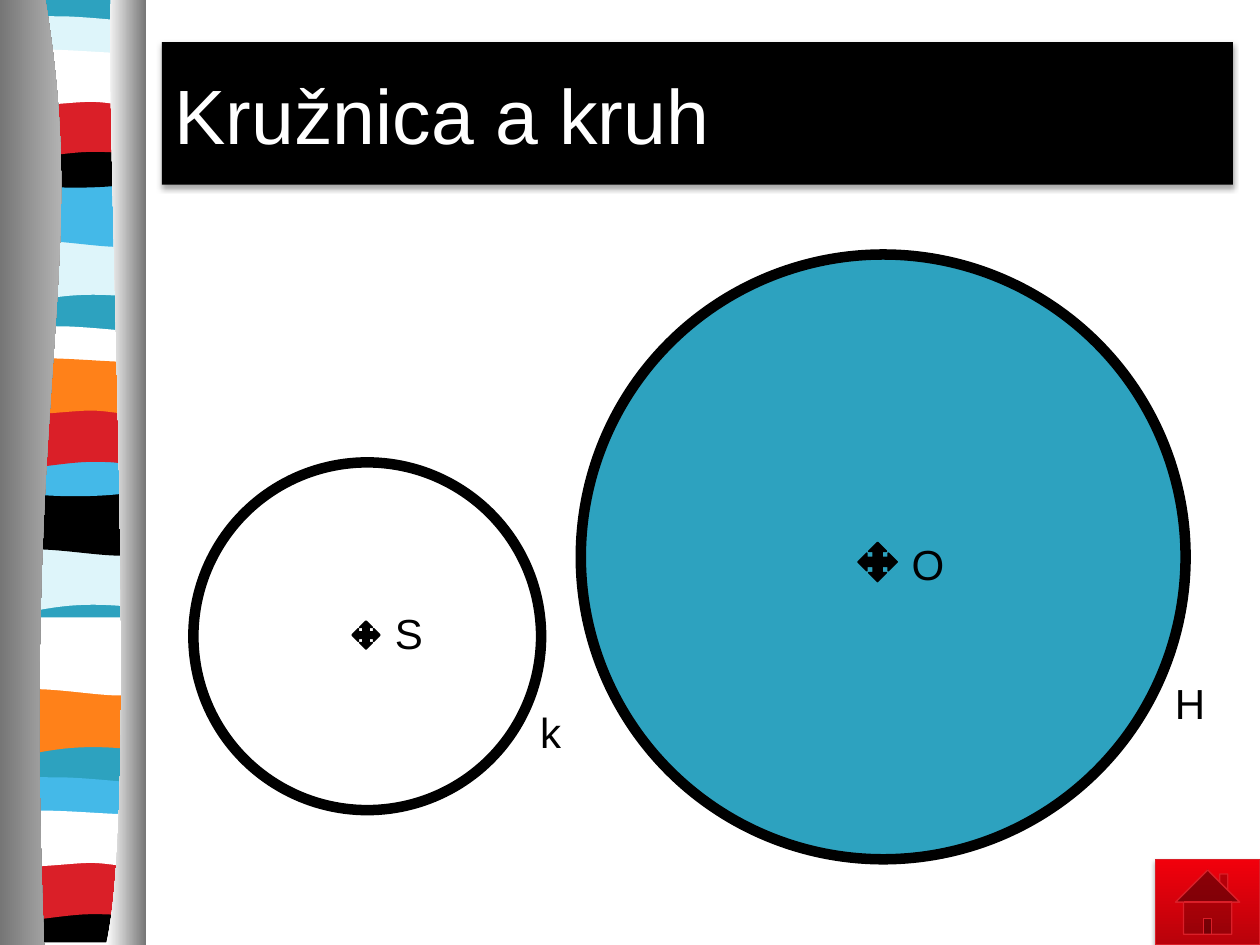
from dataclasses import dataclass

from lxml import etree
from pptx import Presentation
from pptx.dml.color import RGBColor
from pptx.enum.shapes import MSO_SHAPE
from pptx.enum.text import MSO_ANCHOR, PP_ALIGN
from pptx.oxml.ns import qn
from pptx.util import Inches, Pt

ELLIPSE = MSO_SHAPE.OVAL
CENTRE_MARK = MSO_SHAPE.QUAD_ARROW
HOME_BUTTON = MSO_SHAPE.ACTION_BUTTON_HOME
LEFT, CENTER = PP_ALIGN.LEFT, PP_ALIGN.CENTER
MIDDLE, TOP = MSO_ANCHOR.MIDDLE, MSO_ANCHOR.TOP
COLUMNS, ROWS, CELL = 100, 75, 0.1
TITLE_ONLY = 5


@dataclass(frozen=True)
class Theme:
    """Colours, font and type sizes of the slide."""
    teal: str = "2DA2BF"
    pale: str = "DEF5FA"
    white: str = "FFFFFF"
    red: str = "DA1F28"
    black: str = "000000"
    blue: str = "44B9E8"
    orange: str = "FF8119"
    grey: str = "767676"
    silver: str = "D0D0D0"
    button_dark: str = "B8020B"
    button_bright: str = "F2000C"
    font: str = "Arial"
    title_size: int = 44
    label_size: int = 24
    outline: float = 6
    hairline: float = 1


THEME = Theme()

NEAR, FAR, STRETCH = 0.5, 11.4, 1.25
WAVES = {
    "sag": [[(FAR, 0)], [(FAR, 4.7)], [(3.9, 3.9), (2.4, 5.5), (NEAR, 4.7)], [(NEAR, 0)]],
    "swell": [[(FAR, 0)], [(FAR, 4.7)], [(9.6, 5.5), (3.9, 4.1), (NEAR, 4.7)], [(NEAR, 0)]],
    "lens": [[(FAR, 0.5)], [(FAR, 2.9)], [(9.6, 3.4), (2.4, 3.4), (NEAR, 2.9)], [(NEAR, 0.5)],
             [(1.2, 0), (2.9, 0.1), (4.7, 0.1)], [(6.5, 0.1), (10, 0.4), (FAR, 0.5)]],
    "bowl": [[(FAR, 0)], [(FAR, 3.2)], [(9.6, 3.8), (2.4, 3.8), (NEAR, 3.2)], [(NEAR, 0)],
             [(7.2, 0.5), (9.1, 0), (FAR, 0)]],
    "arch": [[(FAR, 0)], [(FAR, 4.7)], [(9.7, 4.2), (9, 4.2), (7.2, 4.2)],
             [(5.4, 4.2), (2.2, 4.7), (NEAR, 4.7)], [(NEAR, 0)]],
    "ribbon": [[(FAR, 0.5)], [(FAR, 3.6)], [(10.7, 4.1), (9, 3.6), (7.2, 3.6)],
               [(5.4, 3.6), (1.7, 4.1), (NEAR, 3.6)], [(NEAR, 0.5)],
               [(2.1, 0), (7.9, 0.5), (9.7, 0.5)], [(11.5, 0.5), (11, 0.5), (FAR, 0.5)]],
    "base": [[(FAR, 0)], [(FAR, 3.2)], [(NEAR, 3.2)], [(NEAR, 0)],
             [(7.2, 0.5), (9.1, 0), (FAR, 0)]],
}
BACKDROP = [[(FAR, 0)], [(FAR, 74.8)], [(NEAR, 74.8)], [(NEAR, 0)]]
BANDS = [
    ("sag", "pale", 18.5), ("swell", "blue", 14.1), ("lens", "pale", 1.6),
    ("bowl", "black", 10.8), ("arch", "red", 7.4), ("ribbon", "white", 4.1),
    ("sag", "pale", 43.1), ("swell", "black", 38.6), ("lens", "white", 26.2),
    ("bowl", "blue", 35.3), ("arch", "red", 32), ("ribbon", "orange", 28.6),
    ("sag", "orange", 54.4), ("swell", "white", 49.7), ("lens", "blue", 62),
    ("base", "black", 71.2), ("arch", "red", 67.9), ("ribbon", "white", 64.5),
]
LEFT_CURTAIN = [[(3.6, 0)], [(7.2, 21.6), (1.7, 29.6), (3.5, 75)], [(0, 75)], [(0, 0)]]
RIGHT_CURTAIN = [[(8.8, 0)], [(8.4, 12.5), (11.1, 64.6), (8.4, 75)], [(11.6, 75)], [(11.6, 0)]]
CIRCLES = [
    ("H", (91.7, 53.25, 5.5, 5), (46.1, 20.2, 48, 48), "teal",
     "O", (70.5, 42.25, 6.3, 5), (68.1, 43.05, 3.1, 3.1)),
    ("k", (41.35, 55.6, 4.7, 5), (15.35, 36.7, 27.6, 27.6), None,
     "S", (30.3, 47.7, 4.3, 5), (27.95, 49.3, 2.2, 2.2)),
]


def grid(cells):
    """Convert a count of grid cells to a length."""
    return Inches(cells * CELL)


def colour(name):
    """Look up a theme colour."""
    return RGBColor.from_string(getattr(THEME, name))


def set_values(target, values):
    """Set every attribute named in a dict."""
    for name, value in values.items():
        setattr(target, name, value)


def place(shape, area):
    """Move and size a shape on the grid."""
    names = ("left", "top", "width", "height")
    set_values(shape, dict(zip(names, map(grid, area))))


def paint(shape, fill=None, line=None, width=1):
    """Give a shape a flat fill and line without a shadow."""
    shape.shadow.inherit = False
    if fill:
        shape.fill.solid()
        shape.fill.fore_color.rgb = colour(fill)
    else:
        shape.fill.background()
    if line:
        shape.line.color.rgb = colour(line)
        shape.line.width = Pt(width)
    else:
        shape.line.fill.background()


def blend(shape, start, end, angle):
    """Fill a shape with a gradient of two colours."""
    shape.fill.gradient()
    shape.fill.gradient_angle = angle
    for stop, name, position in zip(shape.fill.gradient_stops, (start, end), (0, 1)):
        stop.position = position
        stop.color.rgb = colour(name)


def cast_shadow(shape):
    """Put a soft shadow below a shape."""
    shape.shadow.inherit = False
    effects = shape._element.spPr.find(qn("a:effectLst"))
    shadow = etree.SubElement(effects, qn("a:outerShdw"), blurRad=str(Pt(3.1)),
                              dist=str(Pt(1.8)), dir="5400000", rotWithShape="0")
    tint = etree.SubElement(shadow, qn("a:srgbClr"), val=THEME.black)
    etree.SubElement(tint, qn("a:alpha"), val="35000")


def write(box, text, size, name, align, anchor):
    """Write one formatted line in a box."""
    set_values(box.text_frame, {"word_wrap": True, "vertical_anchor": anchor})
    para = box.text_frame.paragraphs[0]
    para.alignment = align
    span = para.add_run()
    span.text = text
    set_values(span.font, {"name": THEME.font, "size": Pt(size)})
    span.font.color.rgb = colour(name)


def add_outline(page, segments):
    """Add a closed outline of lines and cubic curves."""
    corners = [(grid(column), grid(row)) for segment in segments for column, row in segment]
    builder = page.shapes.build_freeform(*corners[0])
    builder.add_line_segments(corners[1:], close=True)
    shape = builder.convert_to_shape()
    lines = iter(list(shape._element.spPr.iter(qn("a:lnTo"))))
    for segment in segments[1:]:
        nodes = [next(lines) for _ in segment]
        if len(nodes) == 3:
            curve = etree.Element(qn("a:cubicBezTo"))
            nodes[0].addprevious(curve)
            for node in nodes:
                curve.append(node[0])
                node.getparent().remove(node)
    return shape


def add_band(page, wave, name, top):
    """Add one wavy band, stretched about its middle."""
    rows = [row for segment in WAVES[wave] for _, row in segment]
    middle = (min(rows) + max(rows)) / 2
    segments = [[(column, min(ROWS - 0.2, top + middle + (row - middle) * STRETCH))
                 for column, row in segment] for segment in WAVES[wave]]
    paint(add_outline(page, segments), name)


def add_curtain(page, segments, start, end):
    """Add a shaded curtain beside the strip."""
    curtain = add_outline(page, segments)
    paint(curtain)
    blend(curtain, start, end, 0)


def add_shape(page, kind, area, fill, width):
    """Add a preset shape with a black line."""
    shape = page.shapes.add_shape(kind, *map(grid, area))
    paint(shape, fill, "black", width)
    return shape


def add_label(page, text, area):
    """Add a centred letter."""
    box = page.shapes.add_textbox(*map(grid, area))
    write(box, text, THEME.label_size, "black", CENTER, TOP)


def add_title(page, text):
    """Format the title placeholder as a black bar."""
    title = page.shapes.title
    place(title, (12.85, 3.35, 85, 11.3))
    title.fill.solid()
    title.fill.fore_color.rgb = colour("black")
    cast_shadow(title)
    write(title, text, THEME.title_size, "white", LEFT, MIDDLE)


def add_home_button(page):
    """Add the red home button in the corner."""
    button = add_shape(page, HOME_BUTTON, (91.7, 68.2, 8.3, 6.8), "red", 0.75)
    button.line.color.rgb = colour("red")
    blend(button, "button_dark", "button_bright", 90)
    cast_shadow(button)


def main():
    """Build and save the deck."""
    deck = Presentation()
    set_values(deck, {"slide_width": grid(COLUMNS), "slide_height": grid(ROWS)})
    page = deck.slides.add_slide(deck.slide_layouts[TITLE_ONLY])
    paint(add_outline(page, BACKDROP), "teal")
    for band in BANDS:
        add_band(page, *band)
    add_curtain(page, LEFT_CURTAIN, "grey", "silver")
    add_curtain(page, RIGHT_CURTAIN, "white", "grey")
    add_title(page, "Kružnica a kruh")
    for name, name_area, area, fill, centre, centre_area, mark in CIRCLES:
        add_label(page, name, name_area)
        add_shape(page, ELLIPSE, area, fill, THEME.outline)
        add_label(page, centre, centre_area)
        add_shape(page, CENTRE_MARK, mark, "black", THEME.hairline)
    add_home_button(page)
    deck.save("out.pptx")


if __name__ == "__main__":
    main()
